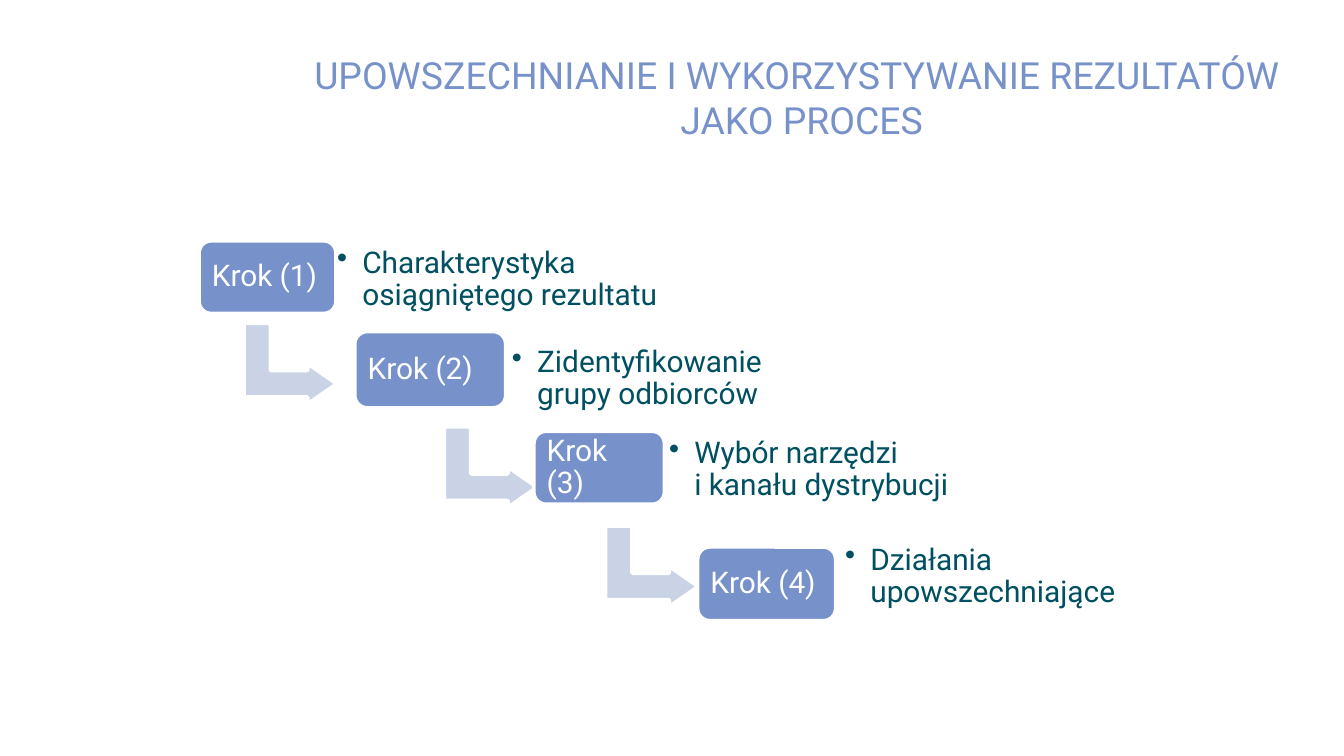
from dataclasses import dataclass

from lxml import etree
from pptx import Presentation
from pptx.dml.color import RGBColor
from pptx.enum import shapes, text
from pptx.oxml.ns import qn
from pptx.util import Pt


@dataclass(frozen=True)
class Theme:
    font: str = "Roboto"
    blue: str = "7791CA"
    pale: str = "CAD2E6"
    teal: str = "005061"
    white: str = "FFFFFF"
    title_size: int = 20
    body_size: int = 16
    inset: int = 5
    hanging: float = 13.5


# Per step: label, box frame, description, description frame
STEPS = [
    ("Krok (1)", (106.6, 129, 73.4, 39),
     "Charakterystyka osiągniętego rezultatu", (175.7, 129, 185, 41.8)),
    ("Krok (2)", (190, 177.6, 81, 41),
     "Zidentyfikowanie grupy odbiorców", (269.3, 182.2, 154.8, 41.8)),
    ("Krok (3)", (286, 231, 70, 39.2),
     "Wybór narzędzi \ni kanału dystrybucji", (353.5, 231, 172.8, 41.8)),
    ("Krok (4)", (373.7, 293, 74, 39.6),
     "Działania\nupowszechniające", (447.8, 285, 164.2, 48.2)),
]
ARROW_SIZE = (43.2, 49.7)
ARROW_CORNERS = [(133.9, 170), (241.2, 225.4), (327.6, 278.6)]


def format_text(tf, content, *, font, size, color, align=text.PP_ALIGN.LEFT,
                spacing=None, after=0, inset=None, hanging=None):
    """Fill a text frame with one paragraph; hanging adds a bullet."""
    tf.word_wrap = True
    tf.auto_size = text.MSO_AUTO_SIZE.NONE
    tf.vertical_anchor = text.MSO_ANCHOR.MIDDLE
    if inset is not None:
        tf.margin_left = tf.margin_right = Pt(inset)
        tf.margin_top = tf.margin_bottom = Pt(inset)
    p = tf.paragraphs[0]
    p.text = content
    p.alignment = align
    p.space_before = Pt(0)
    p.space_after = Pt(after)
    if spacing:
        p.line_spacing = spacing
    if hanging:
        pPr = p._p.get_or_add_pPr()
        pPr.set("marL", str(Pt(hanging)))
        pPr.set("indent", str(-Pt(hanging)))
        etree.SubElement(pPr, qn("a:buChar"), char="•")
    for r in p.runs:
        r.font.name = font
        r.font.size = Pt(size)
        r.font.color.rgb = RGBColor.from_string(color)


class Deck:
    def __init__(self, theme, width, height):
        self.theme = theme
        self.prs = Presentation()
        self.prs.slide_width, self.prs.slide_height = Pt(width), Pt(height)
        self.s = self.prs.slides.add_slide(self.prs.slide_layouts[5])

    def title(self, content, frame):
        t, sp = self.theme, self.s.shapes.title
        sp.left, sp.top, sp.width, sp.height = map(Pt, frame)
        format_text(sp.text_frame, content, font=t.font, size=t.title_size,
                    color=t.blue, align=text.PP_ALIGN.CENTER)

    def shape(self, kind, frame, fill):
        sp = self.s.shapes.add_shape(kind, *map(Pt, frame))
        sp.shadow.inherit = False
        sp.fill.solid()
        sp.fill.fore_color.rgb = RGBColor.from_string(fill)
        sp.line.color.rgb = RGBColor.from_string(self.theme.white)
        sp.line.width = Pt(2)
        return sp

    def step(self, label, frame):
        t = self.theme
        sp = self.shape(shapes.MSO_SHAPE.ROUNDED_RECTANGLE, frame, t.blue)
        format_text(sp.text_frame, label, font=t.font, size=t.body_size,
                    color=t.white, spacing=0.9, after=5.6, inset=t.inset)

    def arrow(self, corner):
        sp = self.shape(shapes.MSO_SHAPE.BENT_UP_ARROW, corner + ARROW_SIZE, self.theme.pale)
        sp.rotation = 90
        for i, value in enumerate((0.33, 0.25, 0.36)):
            sp.adjustments[i] = value

    def description(self, content, frame):
        t = self.theme
        sp = self.s.shapes.add_textbox(*map(Pt, frame))
        format_text(sp.text_frame, content, font=t.font, size=t.body_size,
                    color=t.teal, spacing=0.9, after=2.4, inset=t.inset,
                    hanging=t.hanging)


def main():
    deck = Deck(Theme(), 720, 405)
    deck.title("UPOWSZECHNIANIE I WYKORZYSTYWANIE REZULTATÓW \nJAKO PROCES",
               (139, 26.6, 581, 51))
    for corner in ARROW_CORNERS:
        deck.arrow(corner)
    for label, box, content, frame in STEPS:
        deck.step(label, box)
        deck.description(content, frame)
    deck.prs.save("out.pptx")


if __name__ == "__main__":
    main()
